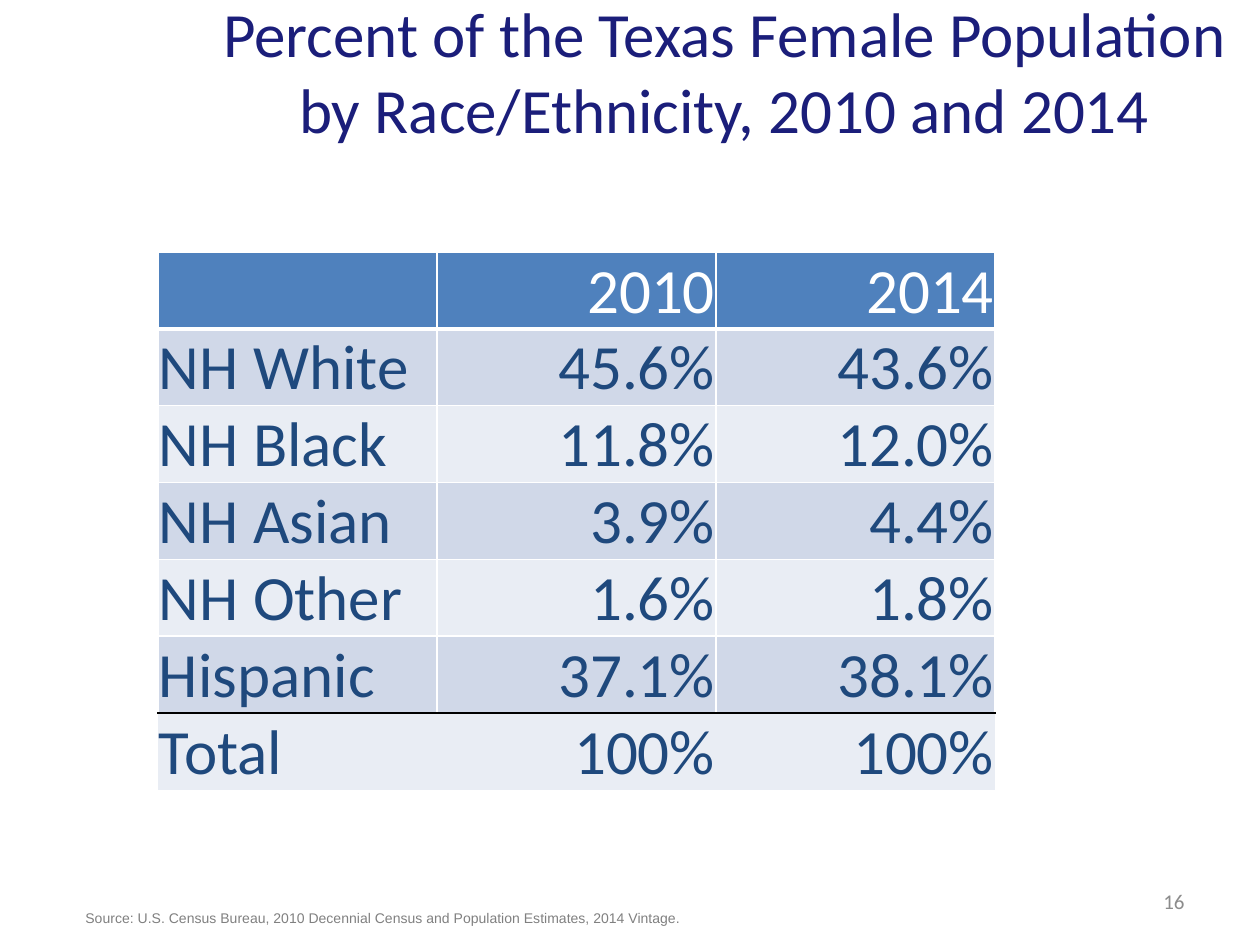
import lxml.etree
import pptx
import pptx.dml.color
import pptx.enum.text
import pptx.oxml.ns
import pptx.util

PX = 914400 / 126
COLORS = {
    "title": "1B1E7A", "header": "4F81BD", "band": "D0D8E8", "light": "E9EDF4",
    "body": "1F497D", "white": "FFFFFF", "black": "000000",
    "number": "8C8C8C", "source": "808080",
}
ROWS = [
    ("", "2010", "2014"),
    ("NH White", "45.6%", "43.6%"),
    ("NH Black", "11.8%", "12.0%"),
    ("NH Asian", "3.9%", "4.4%"),
    ("NH Other", "1.6%", "1.8%"),
    ("Hispanic", "37.1%", "38.1%"),
    ("Total", "100%", "100%"),
]
ALIGN = pptx.enum.text.PP_ALIGN
ANCHOR = pptx.enum.text.MSO_ANCHOR


def emu(px):
    """Turn px into EMU."""
    return pptx.util.Emu(round(px * PX))


def rgb(name):
    """Look up a named colour."""
    return pptx.dml.color.RGBColor.from_string(COLORS[name])


def add_run(p, text, size, color, font="Calibri", align=ALIGN.LEFT):
    """Add one styled run to an aligned paragraph."""
    p.alignment = align
    r = p.add_run()
    r.text = text
    r.font.size = pptx.util.Pt(size)
    r.font.name = font
    r.font.bold = False
    r.font.color.rgb = rgb(color)


def add_text(s, box, text, size, color, font="Calibri", align=ALIGN.LEFT,
             anchor=ANCHOR.MIDDLE, wrap=True):
    """Place a text box holding one paragraph."""
    tf = s.shapes.add_textbox(*map(emu, box)).text_frame
    tf.word_wrap = wrap
    tf.vertical_anchor = anchor
    add_run(tf.paragraphs[0], text, size, color, font, align)


def set_borders(cell, borders):
    """Draw cell borders from (colour, points) by side, or none."""
    tc_pr = cell._tc.get_or_add_tcPr()
    for i, side in enumerate("LRTB"):
        ln = lxml.etree.Element(pptx.oxml.ns.qn(f"a:ln{side}"))
        if side in borders:
            color, width = borders[side]
            ln.set("w", str(pptx.util.Pt(width)))
            fill = lxml.etree.SubElement(ln, pptx.oxml.ns.qn("a:solidFill"))
            lxml.etree.SubElement(fill, pptx.oxml.ns.qn("a:srgbClr"), val=COLORS[color])
        else:
            lxml.etree.SubElement(ln, pptx.oxml.ns.qn("a:noFill"))
        tc_pr.insert(i, ln)


def row_style(i):
    """Return the fill, text colour and borders of a row."""
    borders = dict.fromkeys("LRTB", ("white", 1))
    if i == 0:
        return "header", "white", {**borders, "B": ("white", 3)}
    fill = "band" if i % 2 else "light"
    if i == 1:
        borders["T"] = ("white", 3)
    if i == len(ROWS) - 2:
        borders["B"] = ("black", 1)
    if i == len(ROWS) - 1:
        borders = {"T": ("black", 1)}
    return fill, "body", borders


def add_population_table(s, box):
    """Fill a box with the population table."""
    left, top, width, height = map(emu, box)
    table = s.shapes.add_table(len(ROWS), len(ROWS[0]), left, top, width, height).table
    for i, values in enumerate(ROWS):
        fill, color, borders = row_style(i)
        for j, value in enumerate(values):
            cell = table.cell(i, j)
            cell.margin_left = cell.margin_right = cell.margin_top = emu(1)
            cell.margin_bottom = 0
            cell.vertical_anchor = ANCHOR.BOTTOM
            cell.fill.solid()
            cell.fill.fore_color.rgb = rgb(fill)
            set_borders(cell, borders)
            if value:
                add_run(cell.text_frame.paragraphs[0], value, 36, color,
                        align=ALIGN.RIGHT if j else ALIGN.LEFT)


def add_footer(s, box):
    """Place the source line and slide number in a box."""
    left, top, width, height = box
    add_text(s, (left + width - 294, top, 294, 50), "16", 12, "number", align=ALIGN.RIGHT)
    add_text(s, (left, top + height - 30, 629, 30),
             "Source: U.S. Census Bureau, 2010 Decennial Census and Population "
             "Estimates, 2014 Vintage.", 8, "source", "Arial", anchor=ANCHOR.TOP, wrap=False)


def main():
    """Build and save the slide."""
    prs = pptx.Presentation()
    prs.slide_width, prs.slide_height = emu(1260), emu(945)
    s = prs.slides.add_slide(prs.slide_layouts[6])
    add_text(s, (210, -10, 1029, 161),
             "Percent of the Texas Female Population by Race/Ethnicity, 2010 and 2014",
             36, "title", align=ALIGN.CENTER)
    add_population_table(s, (158, 252, 837, 538))
    add_footer(s, (73, 876, 1124, 57))
    prs.save("out.pptx")


if __name__ == "__main__":
    main()
